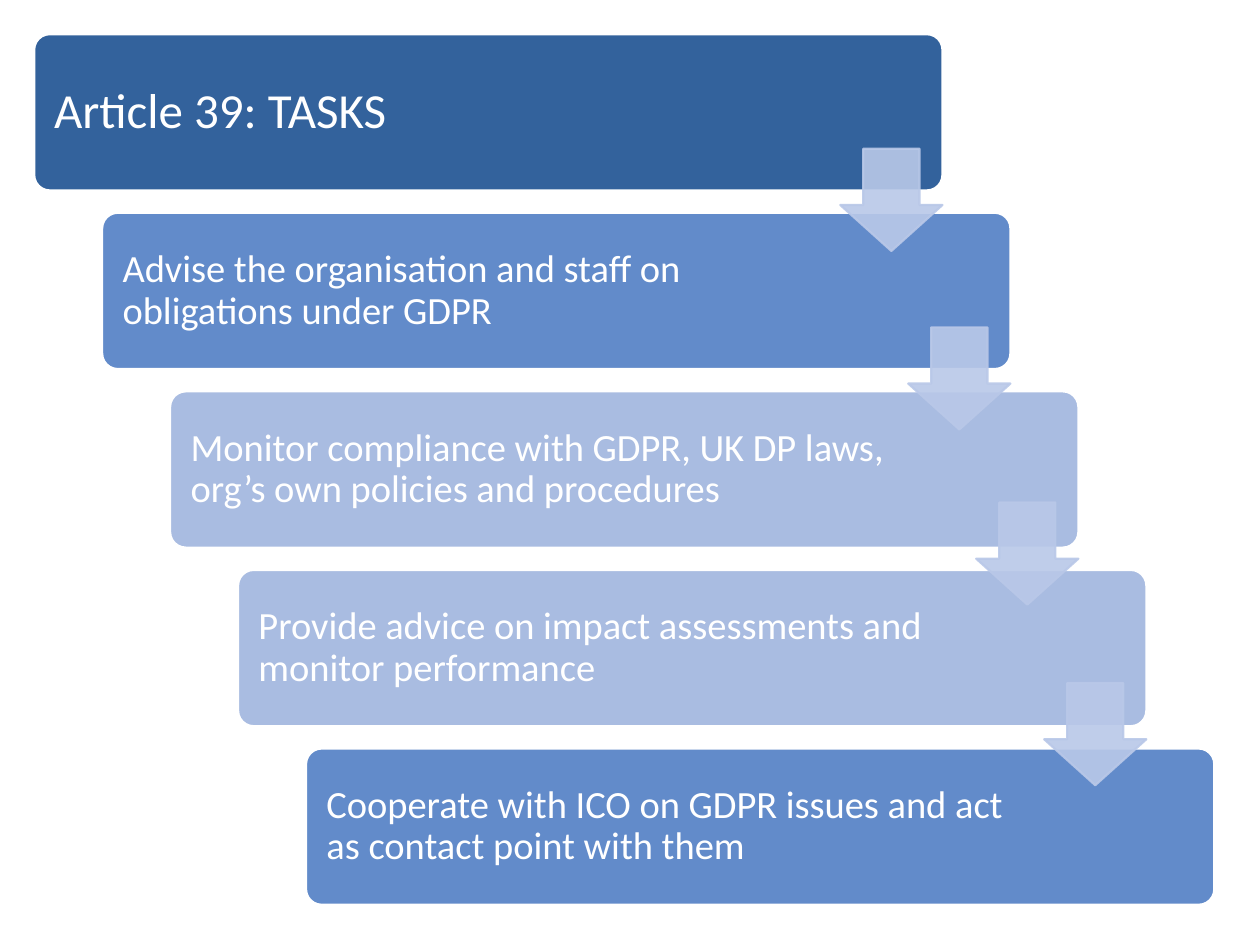
from lxml.etree import SubElement
from pptx import Presentation
from pptx.dml.color import RGBColor
from pptx.enum.shapes import MSO_SHAPE
from pptx.enum.text import MSO_ANCHOR, MSO_AUTO_SIZE, PP_ALIGN
from pptx.oxml.ns import qn
from pptx.util import Cm, Pt

WHITE = RGBColor(0xFF, 0xFF, 0xFF)
DARK_BLUE = RGBColor(0x33, 0x62, 0x9C)
MID_BLUE = RGBColor(0x62, 0x8B, 0xCA)
LIGHT_BLUE = RGBColor(0xA9, 0xBC, 0xE1)
ARROW_BLUE = RGBColor(0xB9, 0xC8, 0xE8)

HEADING = "Article 39: TASKS"
TASKS = [
    ("Advise the organisation and staff on obligations under GDPR", MID_BLUE),
    ("Monitor compliance with GDPR, UK DP laws, org’s own policies and procedures", LIGHT_BLUE),
    ("Provide advice on impact assessments and monitor performance", LIGHT_BLUE),
    ("Cooperate with ICO on GDPR issues and act as contact point with them", MID_BLUE),
]
ARROW_TOPS = [3.0, 6.6, 10.13, 13.77]

MARGIN = 0.69
BOX_WIDTH, BOX_HEIGHT = 18.31, 3.15
STEP_X, STEP_Y = 1.37, 3.6
ARROW_SIZE = 2.06
ARROW_LEFT = MARGIN + BOX_WIDTH - ARROW_SIZE


def add_shape(slide, kind, left, top, width, height, adjustments, fill, line):
    shape = slide.shapes.add_shape(kind, Cm(left), Cm(top), Cm(width), Cm(height))
    for index, value in enumerate(adjustments):
        shape.adjustments[index] = value
    shape.shadow.inherit = False
    shape.fill.solid()
    shape.fill.fore_color.rgb = fill
    shape.line.color.rgb = line
    shape.line.width = Pt(1.25)
    return shape


def add_step_box(slide, step, fill):
    return add_shape(slide, MSO_SHAPE.ROUNDED_RECTANGLE,
                     MARGIN + step * STEP_X, MARGIN + step * STEP_Y,
                     BOX_WIDTH, BOX_HEIGHT, [0.1], fill, WHITE)


def write_text(shape, text, size, left_inset, right_inset):
    frame = shape.text_frame
    frame.text = text
    frame.word_wrap = True
    frame.auto_size = MSO_AUTO_SIZE.NONE
    frame.vertical_anchor = MSO_ANCHOR.MIDDLE
    frame.margin_left, frame.margin_right = Cm(left_inset), Cm(right_inset)
    frame.margin_top = frame.margin_bottom = Cm(0.3)
    paragraph = frame.paragraphs[0]
    paragraph.alignment = PP_ALIGN.LEFT
    paragraph.line_spacing = 0.9
    paragraph.font.name = "Calibri"
    paragraph.font.size = Pt(size)
    paragraph.font.color.rgb = WHITE


def add_arrow(slide, step, top):
    arrow = add_shape(slide, MSO_SHAPE.DOWN_ARROW, ARROW_LEFT + step * STEP_X, top,
                      ARROW_SIZE, ARROW_SIZE, [0.55, 0.45], ARROW_BLUE, ARROW_BLUE)
    for color in arrow.element.spPr.iter(qn("a:srgbClr")):
        SubElement(color, qn("a:alpha"), val="90000")


def main():
    presentation = Presentation()
    presentation.slide_width, presentation.slide_height = Cm(25.4), Cm(19.05)
    slide = presentation.slides.add_slide(presentation.slide_layouts[5])

    heading_box = add_step_box(slide, 0, DARK_BLUE)
    title = slide.shapes.title
    title.left, title.top = heading_box.left, heading_box.top
    title.width, title.height = heading_box.width, heading_box.height
    write_text(title, HEADING, 28, 0.4, 3.73)
    heading_box.element.addnext(title.element)

    for step, (text, fill) in enumerate(TASKS, start=1):
        write_text(add_step_box(slide, step, fill), text, 22, 0.32, 3.73)
    for step, top in enumerate(ARROW_TOPS):
        add_arrow(slide, step, top)

    presentation.save("out.pptx")


if __name__ == "__main__":
    main()
